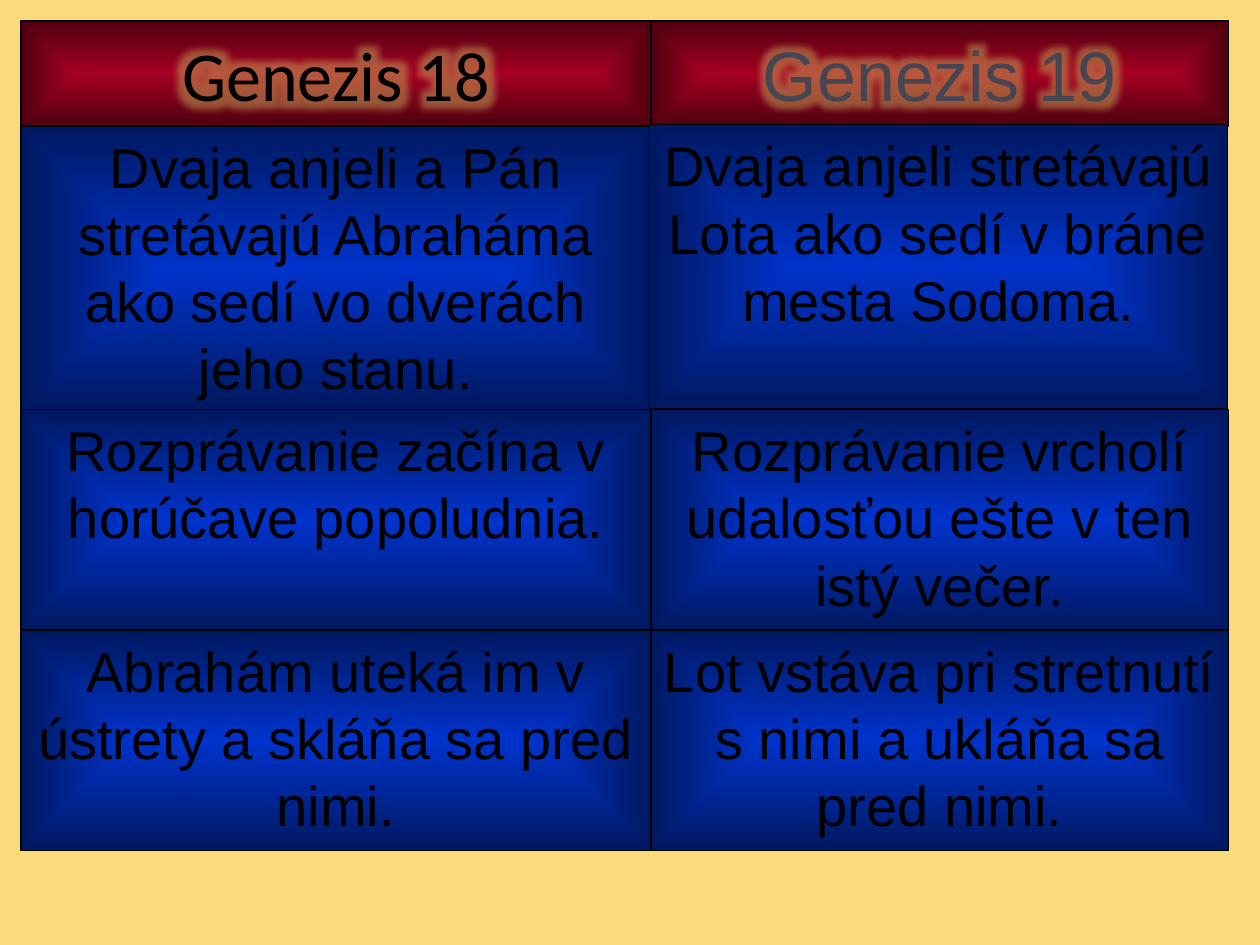
from itertools import accumulate

from pptx import Presentation
from pptx.dml.color import RGBColor
from pptx.enum.shapes import MSO_SHAPE
from pptx.enum.text import MSO_ANCHOR as ANCHOR, PP_ALIGN as ALIGN
from pptx.oxml import parse_xml
from pptx.oxml.ns import nsdecls, qn
from pptx.util import Inches, Pt

BACKGROUND = RGBColor(0xFA, 0xDA, 0x7A)
RED = RGBColor(0xA5, 0x00, 0x21)
BLUE = RGBColor(0x00, 0x33, 0xCC)
BLACK = RGBColor(0x00, 0x00, 0x00)
GREY = RGBColor(0x46, 0x46, 0x53)
GLOW = RGBColor(0xD6, 0xD8, 0x6A)

UNIT = Inches(1) // 12  # the grid has twelve steps to the inch
LEFT, TOP = 2, 2
COLUMNS = (60, 55)
ROWS = (10, 27, 21, 21)
NUDGE = Inches(0.01)

COMPARISON = [
    ("Dvaja anjeli a Pán stretávajú Abraháma ako sedí vo dverách jeho stanu.",
     "Dvaja anjeli stretávajú Lota ako sedí v bráne mesta Sodoma."),
    ("Rozprávanie začína v horúčave popoludnia.",
     "Rozprávanie vrcholí udalosťou ešte v ten istý večer."),
    ("Abrahám uteká im v ústrety a skláňa sa pred nimi.",
     "Lot vstáva pri stretnutí s nimi a ukláňa sa pred nimi."),
]


def starts(first, sizes):
    return list(accumulate(sizes[:-1], initial=first))


def write(s, text, size=32, font="Arial", color=BLACK, anchor=ANCHOR.TOP,
          before=0, glow=False):
    """Put centred text in a shape; before is a percentage of the line."""
    tf = s.text_frame
    tf.word_wrap = True
    tf.vertical_anchor = anchor
    p = tf.paragraphs[0]
    p.alignment = ALIGN.CENTER
    if before:
        p.space_before = Pt(0)
        spacing = p._p.pPr.find(qn("a:spcBef"))
        spacing.replace(spacing[0], parse_xml(
            f'<a:spcPct {nsdecls("a")} val="{before * 1000}"/>'))
    r = p.add_run()
    r.text = text
    r.font.size = Pt(size)
    r.font.name = font
    r.font.color.rgb = color
    if glow:
        r._r.rPr.find(qn("a:solidFill")).addnext(parse_xml(
            f'<a:effectLst {nsdecls("a")}><a:glow rad="{Pt(18)}">'
            f'<a:srgbClr val="{GLOW}"><a:alpha val="40000"/></a:srgbClr>'
            '</a:glow></a:effectLst>'))


class ComparisonSlide:
    def __init__(self, prs):
        self.slide = prs.slides.add_slide(prs.slide_layouts[5])
        fill = self.slide.background.fill
        fill.solid()
        fill.fore_color.rgb = BACKGROUND
        self.xs = starts(LEFT, COLUMNS)
        self.ys = starts(TOP, ROWS)

    def paint(self, s, color):
        """Fill with a colour that darkens from the centre to the edges."""
        s.fill.solid()
        spPr = s._element.spPr
        spPr.replace(spPr.find(qn("a:solidFill")), parse_xml(
            f'<a:gradFill {nsdecls("a")} rotWithShape="1"><a:gsLst>'
            f'<a:gs pos="0"><a:srgbClr val="{color}"/></a:gs>'
            f'<a:gs pos="100000"><a:srgbClr val="{color}">'
            '<a:shade val="18000"/></a:srgbClr></a:gs></a:gsLst>'
            '<a:path path="shape"><a:fillToRect l="50000" t="50000" '
            'r="50000" b="50000"/></a:path></a:gradFill>'))
        s.line.color.rgb = BLACK
        s.line.width = Pt(0.75)

    def box(self, col, row):
        return (self.xs[col] * UNIT, self.ys[row] * UNIT,
                COLUMNS[col] * UNIT, ROWS[row] * UNIT)

    def title(self, col, row, text, **style):
        s = self.slide.shapes.title
        s.left, s.top, s.width, s.height = self.box(col, row)
        self.paint(s, RED)
        write(s, text, **style)

    def cell(self, col, row, text, fill=BLUE, **style):
        s = self.slide.shapes.add_shape(MSO_SHAPE.RECTANGLE,
                                        *self.box(col, row))
        s.shadow.inherit = False
        self.paint(s, fill)
        write(s, text, **style)
        return s


def main():
    prs = Presentation()
    prs.slide_width, prs.slide_height = Inches(10), Inches(7.5)
    page = ComparisonSlide(prs)
    heading = dict(size=40, anchor=ANCHOR.MIDDLE, glow=True)
    page.title(0, 0, "Genezis 18", font="Calibri", **heading)
    page.cell(1, 0, "Genezis 19", RED, color=GREY, **heading)
    for row, texts in enumerate(COMPARISON, start=1):
        for col, text in enumerate(texts):
            s = page.cell(col, row, text, before=20)
            if (col, row) == (1, 1):
                s.left -= NUDGE
                s.top -= NUDGE
    prs.save("out.pptx")


if __name__ == "__main__":
    main()
